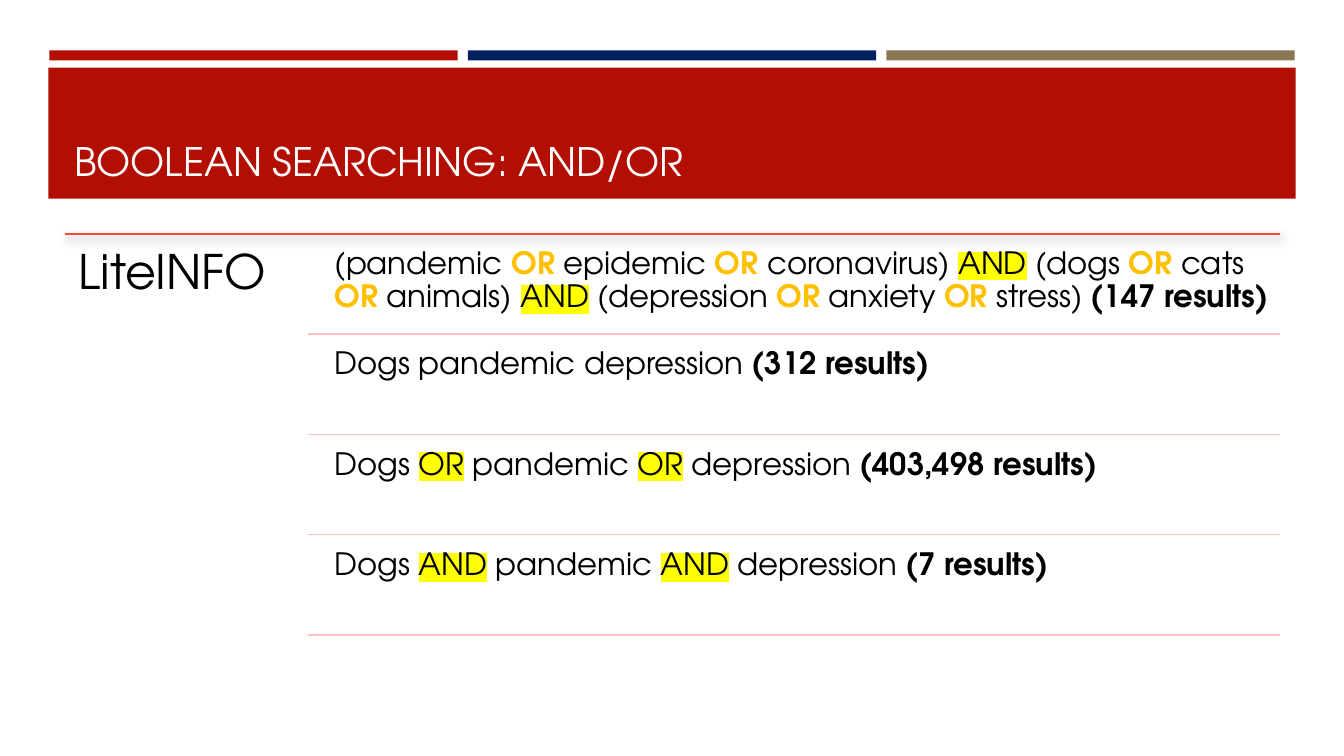
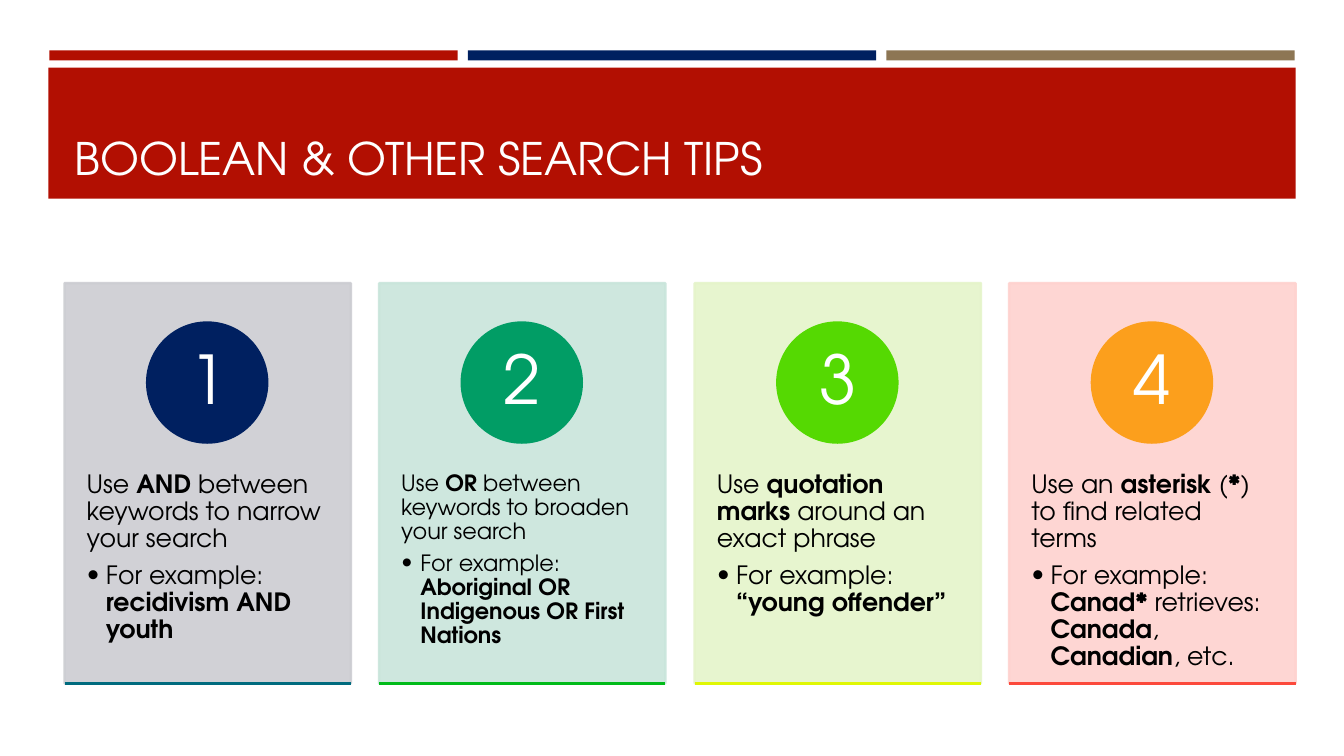
from dataclasses import dataclass
from typing import NamedTuple

from lxml.etree import SubElement
from pptx import Presentation
from pptx.dml.color import RGBColor
from pptx.enum.shapes import MSO_CONNECTOR, MSO_SHAPE
from pptx.enum.text import MSO_ANCHOR, PP_ALIGN
from pptx.oxml.ns import qn
from pptx.util import Pt

RECTANGLE, OVAL = MSO_SHAPE.RECTANGLE, MSO_SHAPE.OVAL
STRAIGHT = MSO_CONNECTOR.STRAIGHT
TOP, MIDDLE, BOTTOM = MSO_ANCHOR.TOP, MSO_ANCHOR.MIDDLE, MSO_ANCHOR.BOTTOM
LEFT, CENTER = PP_ALIGN.LEFT, PP_ALIGN.CENTER
EMU_PER_PX = 9144


@dataclass(frozen=True)
class Theme:
    font: str = "TeX Gyre Adventor"
    white: str = "FFFFFF"
    black: str = "000000"
    red: str = "B20F02"
    navy: str = "002060"
    tan: str = "8D7654"
    coral: str = "FC493B"
    pink: str = "FEC1BF"
    gold: str = "FFC000"
    yellow: str = "FFFF00"
    database_size: int = 34
    query_size: int = 22
    number_size: int = 48
    tip_size: int = 18
    small_tip_size: int = 16
    rule_width: float = 1
    card_line_width: float = 1.75
    line_spacing: float = 0.9
    panel_opacity: int = 90


THEME = Theme()


class Box(NamedTuple):
    left: int
    top: int
    width: int
    height: int


class Run(NamedTuple):
    text: str
    bold: bool = False
    color: str = THEME.black
    highlight: str = ""


class Paragraph(NamedTuple):
    runs: list[Run]
    size: int
    align: PP_ALIGN = LEFT
    spacing: float = THEME.line_spacing
    after: float = 0.35
    bullet: bool = False


class Tip(NamedTuple):
    advice: list[Run]
    example: list[Run]
    panel: str
    badge: str
    base: str
    size: int = THEME.tip_size


def bold(text: str) -> Run:
    return Run(text, bold=True)


def marked(text: str) -> Run:
    return Run(text, highlight=THEME.yellow)


GOLD_OR = Run("OR", bold=True, color=THEME.gold)

QUERIES = [
    [Run("(pandemic "), GOLD_OR, Run(" epidemic "), GOLD_OR,
     Run(" coronavirus) "), marked("AND"), Run(" (dogs "), GOLD_OR,
     Run(" cats "), GOLD_OR, Run(" animals) "), marked("AND"),
     Run(" (depression "), GOLD_OR, Run(" anxiety "), GOLD_OR,
     Run(" stress) "), bold("(147 results)")],
    [Run("Dogs pandemic depression "), bold("(312 results)")],
    [Run("Dogs "), marked("OR"), Run(" pandemic "), marked("OR"),
     Run(" depression "), bold("(403,498 results)")],
    [Run("Dogs "), marked("AND"), Run(" pandemic "), marked("AND"),
     Run(" depression "), bold("(7 results)")],
]

TIPS = [
    Tip([Run("Use "), bold("AND"), Run(" between keywords to narrow your search")],
        [bold("recidivism AND youth")], "CCCDD2", THEME.navy, "006B7E"),
    Tip([Run("Use "), bold("OR"), Run(" between keywords to broaden your search")],
        [bold("Aboriginal OR Indigenous OR First Nations")],
        "C9E5DB", "019D65", "01BB19", THEME.small_tip_size),
    Tip([Run("Use "), bold("quotation marks "), Run("around an exact phrase")],
        [bold("“young offender”")], "E5F4CA", "55D902", "DFF703"),
    Tip([Run("Use an "), bold("asterisk"), Run(" ("), bold("*"),
         Run(") to find related terms")],
        [bold("Canad* "), Run("retrieves: "), bold("Canada"), Run(", "),
         bold("Canadian"), Run(", etc.")],
        "FED2CF", "FC9F1C", THEME.coral),
]


def px(length: float) -> int:
    return round(length * EMU_PER_PX)


def rgb(color: str) -> RGBColor:
    return RGBColor.from_string(color)


def add_block(slide, kind: MSO_SHAPE, box: Box, color: str,
              outline: float = 0, opacity: int = 100) -> None:
    block = slide.shapes.add_shape(kind, *map(px, box))
    block.shadow.inherit = False
    block.fill.solid()
    block.fill.fore_color.rgb = rgb(color)
    if outline:
        block.line.color.rgb = rgb(color)
        block.line.width = Pt(outline)
    else:
        block.line.fill.background()
    if opacity < 100:
        for tint in block.element.spPr.iter(qn("a:srgbClr")):
            SubElement(tint, qn("a:alpha"), val=str(opacity * 1000))


def add_rule(slide, left: int, right: int, y: float, color: str,
             width: float, shadowed: bool = False) -> None:
    rule = slide.shapes.add_connector(STRAIGHT, px(left), px(y), px(right), px(y))
    rule.line.color.rgb = rgb(color)
    rule.line.width = Pt(width)
    effects = SubElement(rule.element.spPr, qn("a:effectLst"))
    if shadowed:
        shadow = SubElement(effects, qn("a:outerShdw"), blurRad=str(Pt(7)),
                            dist=str(Pt(3)), dir=str(84 * 60000), rotWithShape="0")
        shade = SubElement(shadow, qn("a:srgbClr"), val=THEME.black)
        SubElement(shade, qn("a:alpha"), val="60000")


def add_run(line, part: Run, size: int) -> None:
    run = line.add_run()
    run.text = part.text
    run.font.size = Pt(size)
    run.font.bold = part.bold
    run.font.color.rgb = rgb(part.color)
    if part.highlight:
        mark = SubElement(run.font._element, qn("a:highlight"))
        SubElement(mark, qn("a:srgbClr"), val=part.highlight)
    run.font.name = THEME.font


def add_text(slide, box: Box, paragraphs: list[Paragraph], inset_x: int = 9,
             inset_y: int = 9, anchor: MSO_ANCHOR = TOP) -> None:
    frame = slide.shapes.add_textbox(*map(px, box)).text_frame
    frame.word_wrap = True
    frame.vertical_anchor = anchor
    frame.margin_left = frame.margin_right = px(inset_x)
    frame.margin_top = frame.margin_bottom = px(inset_y)
    for index, paragraph in enumerate(paragraphs):
        line = frame.add_paragraph() if index else frame.paragraphs[0]
        line.alignment = paragraph.align
        line.line_spacing = paragraph.spacing
        line.space_after = Pt(paragraph.size * paragraph.after)
        if paragraph.bullet:
            properties = line._p.get_or_add_pPr()
            properties.set("marL", str(px(19)))
            properties.set("indent", str(px(-19)))
            SubElement(properties, qn("a:buFont"), typeface=THEME.font)
            SubElement(properties, qn("a:buChar"), char="•")
        for part in paragraph.runs:
            add_run(line, part, paragraph.size)


def add_titled_slide(deck, title: str, size: int):
    slide = deck.slides.add_slide(deck.slide_layouts[6])
    for index, color in enumerate((THEME.red, THEME.navy, THEME.tan)):
        add_block(slide, RECTANGLE, Box(49 + index * 415, 50, 405, 10), color)
    add_block(slide, RECTANGLE, Box(48, 67, 1237, 130), THEME.red)
    heading = Paragraph([Run(title, color=THEME.white)], size, spacing=1, after=0)
    add_text(slide, Box(64, 77, 1206, 111), [heading], 10, 5, BOTTOM)
    return slide


def add_query_list(slide) -> None:
    left, branch, right, top, pitch = 64, 305, 1270, 232, 99.5
    add_rule(slide, left, right, top, THEME.coral, THEME.rule_width, shadowed=True)
    add_text(slide, Box(left, top, branch - left, 402),
             [Paragraph([Run("LiteINFO")], THEME.database_size)], 14, 14)
    for index, query in enumerate(QUERIES):
        row_top = round(top + 5 + index * pitch)
        add_text(slide, Box(323, row_top, right - 323, 95),
                 [Paragraph(query, THEME.query_size)])
        add_rule(slide, branch, right, top + (index + 1) * pitch,
                 THEME.pink, THEME.rule_width)


def add_tip_card(slide, left: int, width: int, number: int, tip: Tip) -> None:
    top, height, badge, numeral = 281, 397, 119, 84
    outline = THEME.card_line_width
    add_block(slide, RECTANGLE, Box(left, top, width, height), tip.panel,
              outline, THEME.panel_opacity)
    add_text(slide, Box(left, 432, width, 238), [
        Paragraph(tip.advice, tip.size),
        Paragraph([Run("For example: "), *tip.example], tip.size,
                  after=0.15, bullet=True),
    ], 22, 36)
    add_block(slide, OVAL, Box(left + (width - badge) // 2, 320, badge, badge),
              tip.badge, outline)
    add_text(slide, Box(left + (width - numeral) // 2, 338, numeral, numeral),
             [Paragraph([Run(str(number), color=THEME.white)],
                        THEME.number_size, CENTER)], 9, 1, MIDDLE)
    add_rule(slide, left, left + width, top + height, tip.base, outline)


def add_tip_cards(slide) -> None:
    left, right, width = 64, 1285, 284
    pitch = (right - left - width) / (len(TIPS) - 1)
    for index, tip in enumerate(TIPS):
        add_tip_card(slide, round(left + index * pitch), width, index + 1, tip)


def main() -> None:
    deck = Presentation()
    deck.slide_width, deck.slide_height = px(1333), px(750)
    add_query_list(add_titled_slide(deck, "BOOLEAN SEARCHING: AND/OR", 28))
    add_tip_cards(add_titled_slide(deck, "BOOLEAN & OTHER SEARCH TIPS", 32))
    deck.save("out.pptx")


if __name__ == "__main__":
    main()
